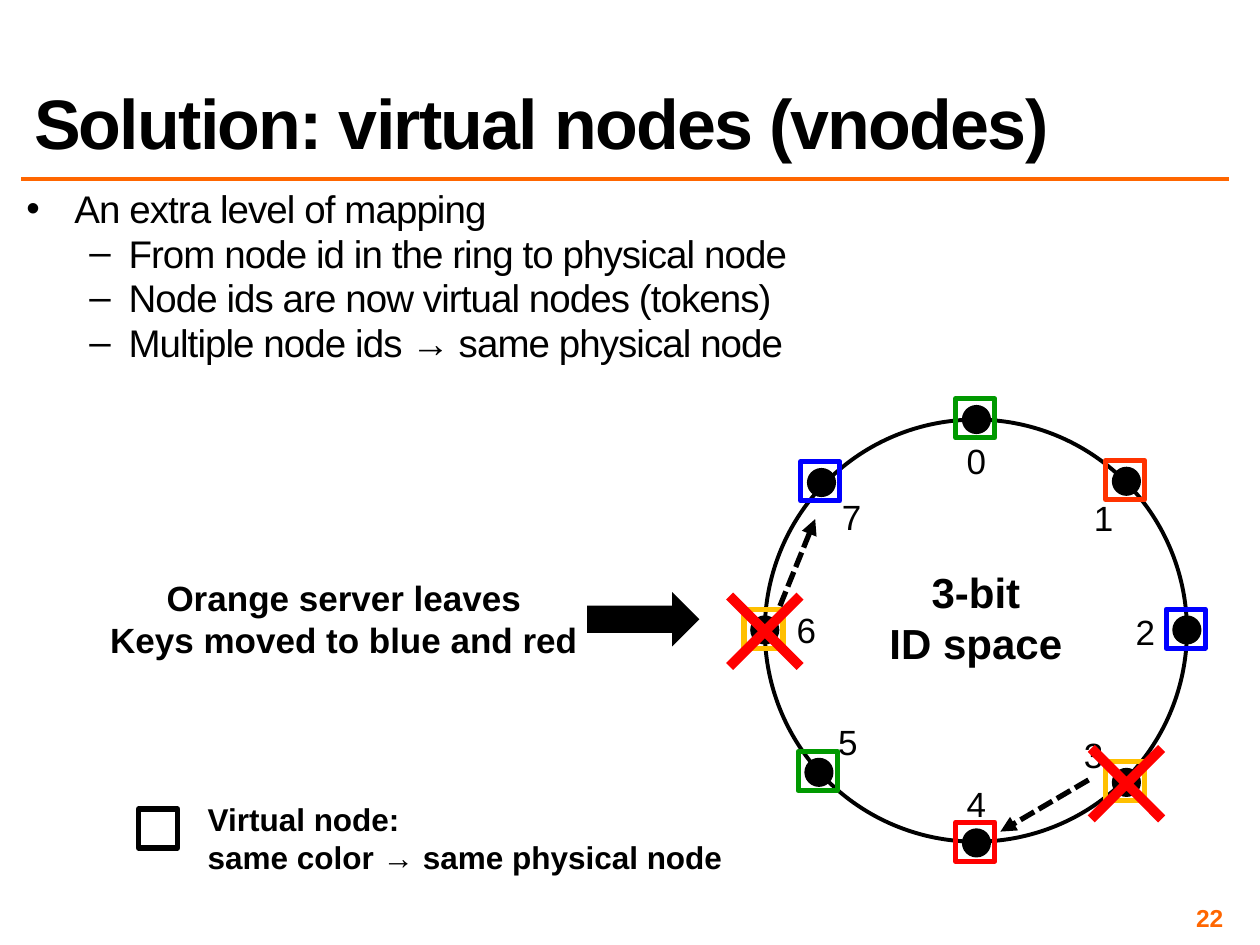
from dataclasses import dataclass

from lxml.etree import SubElement
from pptx import Presentation
from pptx.dml.color import RGBColor
from pptx.enum.dml import MSO_LINE as Dash
from pptx.enum.shapes import MSO_CONNECTOR as Connector, MSO_SHAPE as Shape
from pptx.enum.text import MSO_ANCHOR as Anchor, MSO_AUTO_SIZE as AutoSize, PP_ALIGN as Align
from pptx.oxml.ns import qn
from pptx.util import Inches, Pt

COLUMNS, ROWS = 100, 75
SLIDE_WIDTH, SLIDE_HEIGHT = Inches(10), Inches(7.5)
BLACK, RED, ORANGE = "000000", "FF0000", "FF6600"
GREEN, BLUE, AMBER, VERMILION = "009900", "0000FF", "FFC000", "FF3300"
DOT, SQUARE, CROSS = 2, 3.1, 7.9
LABEL_WIDTH, LABEL_HEIGHT = 3.6, 4.4


@dataclass(frozen=True)
class Area:
    column: float
    row: float
    width: float
    height: float

    def lengths(self) -> tuple:
        return across(self.column), down(self.row), across(self.width), down(self.height)


@dataclass(frozen=True)
class Node:
    label: str
    colour: str
    column: float
    row: float
    label_column: float
    label_row: float
    leaves: bool = False


@dataclass(frozen=True)
class Bullet:
    text: str
    level: int
    mark: str
    margin: float
    hanging: float


NODES = [
    Node("0", GREEN, 77.5, 33.3, 77.5, 36.6),
    Node("1", VERMILION, 89.4, 38.2, 87.6, 41.1),
    Node("2", BLUE, 94.2, 50, 90.9, 50.2),
    Node("3", AMBER, 89.4, 62.1, 86.8, 59.9, leaves=True),
    Node("4", RED, 77.5, 66.9, 77.5, 63.8),
    Node("5", GREEN, 65, 61.3, 67.3, 58.9),
    Node("6", AMBER, 60.7, 50, 64, 50, leaves=True),
    Node("7", BLUE, 65.2, 38.3, 67.6, 41),
]
BULLETS = [Bullet("An extra level of mapping", 0, "•", 3.8, 3.8)] + [
    Bullet(text, 1, "–", 8.1, 3.1)
    for text in (
        "From node id in the ring to physical node",
        "Node ids are now virtual nodes (tokens)",
        "Multiple node ids → same physical node",
    )
]


def across(columns: float) -> int:
    return round(SLIDE_WIDTH * columns / COLUMNS)


def down(rows: float) -> int:
    return round(SLIDE_HEIGHT * rows / ROWS)


def colour_of(value: str) -> RGBColor:
    return RGBColor.from_string(value)


def centred(column: float, row: float, width: float, height: float) -> Area:
    return Area(column - width / 2, row - height / 2, width, height)


def place(shape, area: Area) -> None:
    shape.left, shape.top, shape.width, shape.height = area.lengths()


def style(para, size: float, colour: str = BLACK, bold: bool = False, spacing: float = 0) -> None:
    font = para.font
    font.name, font.size, font.bold = "Arial", Pt(size), bold
    font.color.rgb = colour_of(colour)
    if spacing:
        para._p.pPr.find(qn("a:defRPr")).set("spc", str(round(spacing * 100)))


def set_insets(frame, columns: float) -> None:
    frame.margin_left = frame.margin_right = across(columns)
    frame.margin_top = frame.margin_bottom = down(columns)


def add_text(slide, area: Area, lines: list[str], size: float, align=Align.CENTER,
             bold: bool = False, colour: str = BLACK):
    frame = slide.shapes.add_textbox(*area.lengths()).text_frame
    frame.word_wrap = False
    for index, line in enumerate(lines):
        para = frame.add_paragraph() if index else frame.paragraphs[0]
        para.text, para.alignment = line, align
        style(para, size, colour, bold)
    return frame


def add_shape(slide, kind, area: Area, fill: str | None = None, line: str | None = None,
              weight: float = 3):
    shape = slide.shapes.add_shape(kind, *area.lengths())
    shape.shadow.inherit = False
    if fill:
        shape.fill.solid()
        shape.fill.fore_color.rgb = colour_of(fill)
    else:
        shape.fill.background()
    if line:
        shape.line.color.rgb = colour_of(line)
        shape.line.width = Pt(weight)
    else:
        shape.line.fill.background()
    return shape


def add_line(slide, start: tuple, end: tuple, colour: str, weight: float, arrow: bool = False) -> None:
    line = slide.shapes.add_connector(
        Connector.STRAIGHT, across(start[0]), down(start[1]), across(end[0]), down(end[1]))
    line.line.color.rgb = colour_of(colour)
    line.line.width = Pt(weight)
    if arrow:
        line.line.dash_style = Dash.SQUARE_DOT
        SubElement(line.line._get_or_add_ln(), qn("a:tailEnd"), type="triangle")
    SubElement(line._element.spPr, qn("a:effectLst"))


def fill_title(title) -> None:
    place(title, Area(1.7, 1.7, 95.8, 11.7))
    frame = title.text_frame
    frame.text = "Solution: virtual nodes (vnodes)"
    frame.auto_size, frame.vertical_anchor = AutoSize.NONE, Anchor.BOTTOM
    para = frame.paragraphs[0]
    para.alignment, para.line_spacing = Align.LEFT, 0.8
    style(para, 40, bold=True, spacing=-1)


def fill_body(body) -> None:
    place(body, Area(1.7, 15, 95.8, 55.1))
    frame = body.text_frame
    frame.auto_size = AutoSize.NONE
    set_insets(frame, 0.4)
    for index, bullet in enumerate(BULLETS):
        para = frame.add_paragraph() if index else frame.paragraphs[0]
        para.text, para.level = bullet.text, bullet.level
        para.line_spacing, para.space_before = 0.8, Pt(4.4)
        properties = para._p.get_or_add_pPr()
        properties.set("marL", str(across(bullet.margin)))
        properties.set("indent", str(-across(bullet.hanging)))
        SubElement(properties, qn("a:buChar"), char=bullet.mark)
        style(para, 22, spacing=-0.5)


def draw_ring(slide) -> None:
    add_shape(slide, Shape.OVAL, Area(60.7, 33.3, 33.5, 33.5), line=BLACK, weight=2.25)
    for node in NODES:
        add_shape(slide, Shape.OVAL, centred(node.column, node.row, DOT, DOT), BLACK, BLACK, 2.25)
    add_text(slide, Area(69.5, 44.5, 15.9, 9.1), ["3-bit", "ID space"], 24, bold=True)
    for node in NODES:
        label = centred(node.label_column, node.label_row, LABEL_WIDTH, LABEL_HEIGHT)
        add_text(slide, label, [node.label], 20)
        square = centred(node.column - 0.1, node.row - 0.1, SQUARE, SQUARE)
        add_shape(slide, Shape.RECTANGLE, square, line=node.colour)
    for node in NODES:
        if node.leaves:
            cross = add_shape(slide, Shape.CROSS, centred(node.column, node.row + 0.1, CROSS, CROSS), RED)
            cross.rotation = 45
            cross.adjustments[0] = 0.45


def main() -> None:
    deck = Presentation()
    deck.slide_width, deck.slide_height = SLIDE_WIDTH, SLIDE_HEIGHT
    slide = deck.slides.add_slide(deck.slide_layouts[1])
    add_line(slide, (1.7, 14.2), (97.5, 14.2), ORANGE, 2)
    fill_title(slide.shapes.title)
    fill_body(slide.placeholders[1])
    number = add_text(slide, Area(74.2, 71.7, 23.3, 2.3), ["22"], 14, Align.RIGHT, True, ORANGE)
    number.word_wrap, number.vertical_anchor = True, Anchor.MIDDLE
    set_insets(number, 0.4)
    add_shape(slide, Shape.RECTANGLE, Area(11, 64.2, SQUARE, SQUARE), line=BLACK)
    add_text(slide, Area(15.5, 63, 43.2, 7.1),
             ["Virtual node:", "same color → same physical node"], 18, Align.LEFT, True)
    draw_ring(slide)
    add_line(slide, (61.9, 48.1), (64.7, 41.2), BLACK, 3, arrow=True)
    add_line(slide, (86.4, 61.9), (79.4, 66), BLACK, 3, arrow=True)
    add_shape(slide, Shape.RIGHT_ARROW, Area(46.6, 47, 8.9, 4.3), BLACK)
    add_text(slide, Area(7.6, 45.3, 39.4, 7.7),
             ["Orange server leaves", "Keys moved to blue and red"], 20, bold=True)
    deck.save("out.pptx")


if __name__ == "__main__":
    main()
